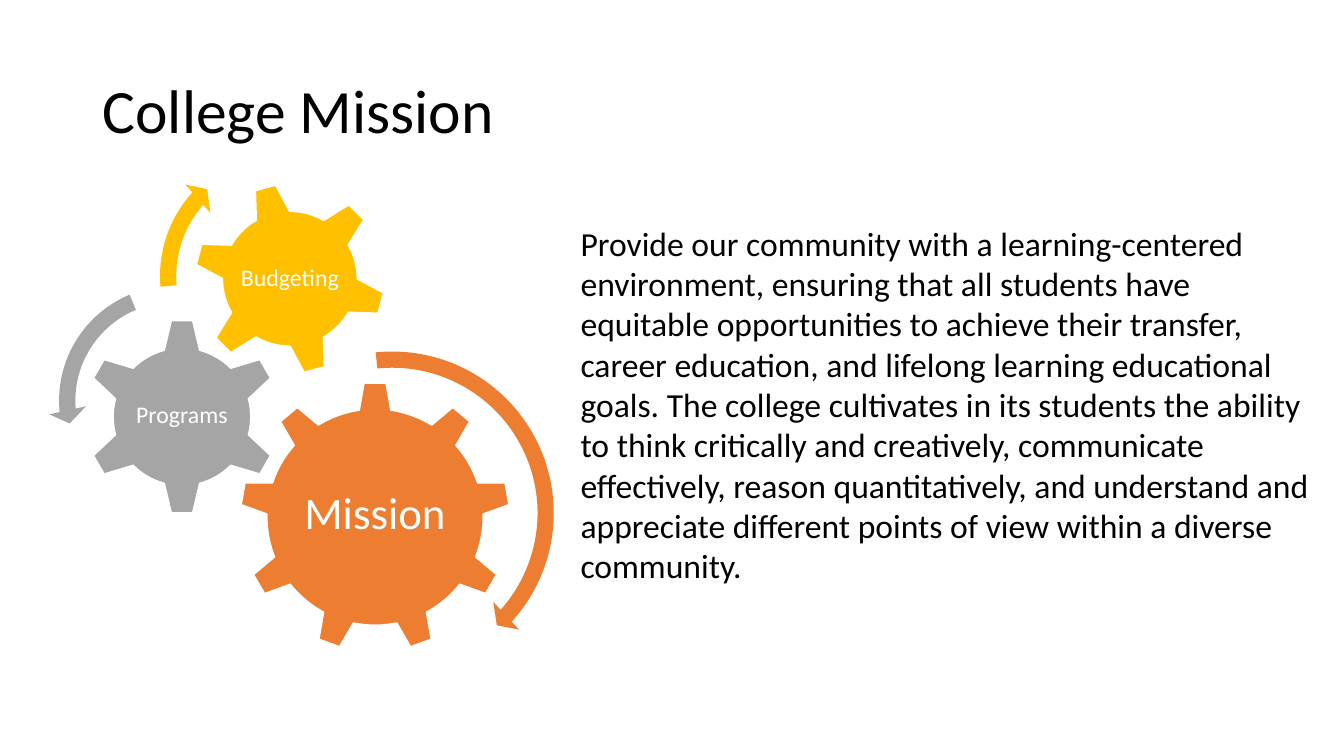
from pptx import Presentation
from pptx.dml.color import RGBColor
from pptx.enum.shapes import MSO_SHAPE
from pptx.enum.text import MSO_ANCHOR, PP_ALIGN
from pptx.util import Emu, Pt

GEAR_6 = MSO_SHAPE.GEAR_6
GEAR_9 = MSO_SHAPE.GEAR_9
ARROW = MSO_SHAPE.CIRCULAR_ARROW
LEFT_ARROW = MSO_SHAPE.LEFT_CIRCULAR_ARROW
TOP = MSO_ANCHOR.TOP
MIDDLE = MSO_ANCHOR.MIDDLE
LEFT = PP_ALIGN.LEFT
CENTER = PP_ALIGN.CENTER

ORANGE = "ED7D31"
GRAY = "A5A5A5"
GOLD = "FFC000"
WHITE = "FFFFFF"
BLACK = "000000"

MISSION = (
    "Provide our community with a learning-centered environment, ensuring that "
    "all students have equitable opportunities to achieve their transfer, career "
    "education, and lifelong learning educational goals. The college cultivates "
    "in its students the ability to think critically and creatively, communicate "
    "effectively, reason quantitatively, and understand and appreciate different "
    "points of view within a diverse community."
)

GEARS = [
    (GEAR_9, (238, 379, 268, 268), 0, ORANGE, "Mission", (292, 442, 160, 138), 32, 4),
    (GEAR_6, (83, 316, 195, 195), 0, GRAY, "Programs", (132, 365, 97, 96), 17, 2),
    (GEAR_6, (192, 181, 191, 191), 345, GOLD, "Budgeting", (234, 223, 107, 107), 17, 2),
]

ARROWS = [
    (ARROW, (218, 338, 342, 342), ORANGE, 4.7, (4.98, 42.03, 264.15), 5.5),
    (LEFT_ARROW, (48, 273, 249, 249), GRAY, 6.5, (7.17, 174.82, 247.3), 7.5),
    (ARROW, (148, 140, 268, 268), GOLD, 6, (6.57, 221.9, 175.14), 7),
]


def px(n):
    return Emu(n * 9144)


def rgb(value):
    return RGBColor.from_string(value)


class Deck:
    font = "Calibri"

    def __init__(self):
        self.prs = Presentation()
        self.prs.slide_width = px(1333)
        self.prs.slide_height = px(750)
        self.s = self.prs.slides.add_slide(self.prs.slide_layouts[6])

    def text(self, box, text, size, color, anchor=TOP, align=LEFT,
             insets=(10, 5, 10, 5), spacing=0.9, before=0, indent=0):
        sp = self.s.shapes.add_textbox(*map(px, box))
        tf = sp.text_frame
        tf.word_wrap = True
        tf.vertical_anchor = anchor
        (tf.margin_left, tf.margin_top,
         tf.margin_right, tf.margin_bottom) = map(px, insets)
        tf.text = text
        p = tf.paragraphs[0]
        p.alignment = align
        p.line_spacing = spacing
        p.space_before = Pt(before)
        if indent:
            p._p.get_or_add_pPr().set("marL", str(px(indent)))
        r = p.runs[0]
        r.font.name = self.font
        r.font.size = Pt(size)
        r.font.color.rgb = rgb(color)

    def shape(self, kind, box, fill):
        sp = self.s.shapes.add_shape(kind, *map(px, box))
        sp.shadow.inherit = False
        sp.fill.solid()
        sp.fill.fore_color.rgb = rgb(fill)
        return sp

    def gear(self, kind, box, fill, rotation):
        sp = self.shape(kind, box, fill)
        sp.rotation = rotation
        sp.line.color.rgb = rgb(WHITE)
        sp.line.width = Pt(1)

    def arrow(self, kind, box, fill, thickness, degrees, head):
        sp = self.shape(kind, box, fill)
        sp.line.fill.background()
        angles = [angle * 0.6 for angle in degrees]
        for i, value in enumerate([thickness / 100, *angles, head / 100]):
            sp.adjustments[i] = value


def main():
    deck = Deck()
    deck.text((92, 40, 1150, 145), "College Mission", 44, BLACK, anchor=MIDDLE)
    deck.text((533, 216, 800, 374), MISSION, 24, BLACK,
              insets=(10, 5, 30, 5), spacing=1.0, before=11.8, indent=33)
    for kind, box, rotation, color, label, label_box, size, inset in GEARS:
        deck.gear(kind, box, color, rotation)
        deck.text(label_box, label, size, WHITE, anchor=MIDDLE, align=CENTER,
                  insets=(inset,) * 4)
    for arrow in ARROWS:
        deck.arrow(*arrow)
    deck.prs.save("out.pptx")


if __name__ == "__main__":
    main()
